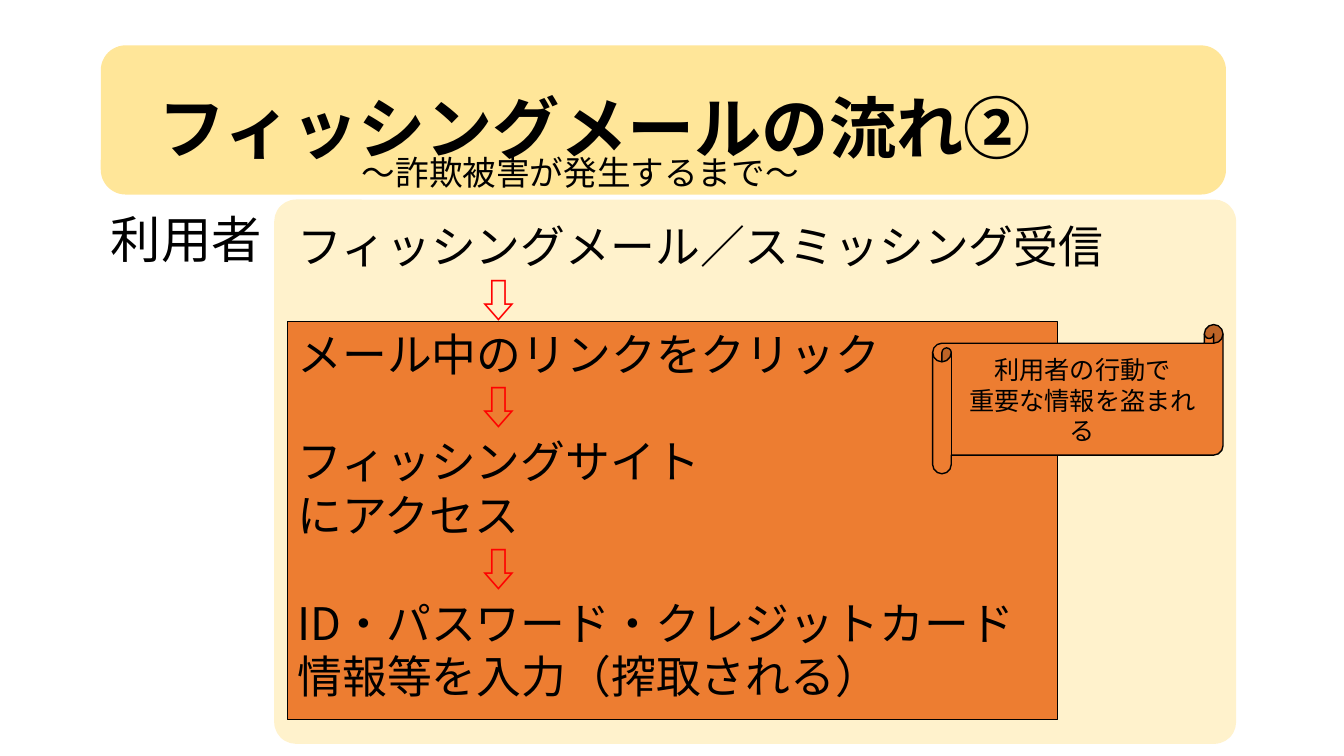
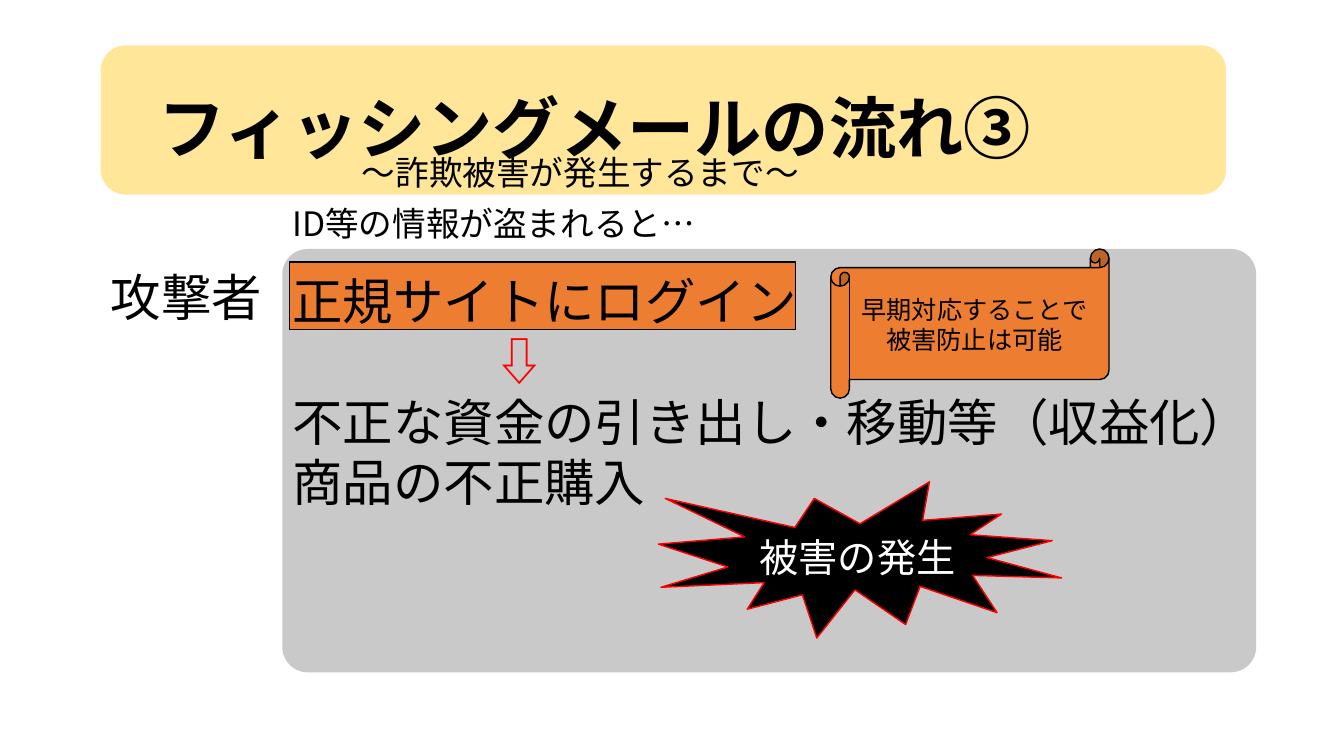
import dataclasses

import lxml.etree
import pptx
import pptx.dml.color
import pptx.enum.lang
import pptx.enum.shapes
import pptx.enum.text
import pptx.oxml.ns
import pptx.util

Inches = pptx.util.Inches
Pt = pptx.util.Pt
SHAPE = pptx.enum.shapes.MSO_SHAPE
ALIGN = pptx.enum.text.PP_ALIGN
ANCHOR = pptx.enum.text.MSO_ANCHOR


@dataclasses.dataclass(frozen=True)
class Theme:
    text: str = "000000"
    inverse: str = "FFFFFF"
    alert: str = "FF0000"
    band: str = "FFE699"
    user_panel: str = "FFF2CC"
    attacker_panel: str = "C9C9C9"
    highlight: str = "ED7D31"
    japanese_font: str = "Noto Sans CJK JP"
    callout_font: str = "Calibri"
    title_size: int = 48
    large_size: int = 36
    step_size: int = 32
    burst_size: int = 28
    small_size: int = 24
    callout_size: int = 18
    line_pitch: float = 1.2
    top_shift: float = 0.07


THEME = Theme()
ARROW = "⇩"
ARROW_INDENT = 4  # in characters
SUBTITLE = "～詐欺被害が発生するまで～"


def rgb(value):
    return pptx.dml.color.RGBColor.from_string(value)


def set_attributes(target, values):
    for name, value in values.items():
        setattr(target, name, value)


def place(shape, box):
    names = ("left", "top", "width", "height")
    set_attributes(shape, dict(zip(names, map(Inches, box))))


def add_element(parent, tag, **attributes):
    return lxml.etree.SubElement(parent, pptx.oxml.ns.qn(tag), attributes)


def add_run(paragraph, text, size, color, font_name, bold):
    run = paragraph.add_run()
    run.text = text
    run.font.color.rgb = rgb(color)
    set_attributes(run.font, {
        "name": font_name,
        "size": Pt(size),
        "bold": bold,
        "language_id": pptx.enum.lang.MSO_LANGUAGE_ID.JAPANESE,
    })
    add_element(run.font._element, "a:ea", typeface=font_name)


def write(shape, lines, size, color=THEME.text, font_name=THEME.japanese_font,
          bold=False, align=ALIGN.LEFT, anchor=ANCHOR.TOP, spacing=1):
    """Fill a shape with one paragraph a line; arrow lines are indented and red."""
    frame = shape.text_frame
    set_attributes(frame, {
        "word_wrap": True,
        "auto_size": pptx.enum.text.MSO_AUTO_SIZE.NONE,
        "vertical_anchor": anchor,
        "margin_left": Inches(0.1),
        "margin_right": Inches(0.1),
        "margin_top": Inches(0.05) + Pt(THEME.top_shift * size),
        "margin_bottom": Inches(0.05),
    })
    for index, line in enumerate(lines):
        paragraph = frame.add_paragraph() if index else frame.paragraphs[0]
        is_arrow = line == ARROW
        set_attributes(paragraph, {
            "alignment": align,
            "line_spacing": Pt(size * THEME.line_pitch * spacing),
            "space_before": Pt(0),
            "space_after": Pt(0),
        })
        properties = paragraph._p.get_or_add_pPr()
        indent = Pt(ARROW_INDENT * size) if is_arrow else 0
        properties.set("marL", str(indent))
        properties.set("indent", "0")
        add_element(properties, "a:buNone")
        add_run(paragraph, line, size, THEME.alert if is_arrow else color,
                font_name, bold)


def add_block(slide, kind, box, fill, line=None, corner=None):
    shape = slide.shapes.add_shape(kind, *map(Inches, box))
    shape.shadow.inherit = False
    shape.fill.solid()
    shape.fill.fore_color.rgb = rgb(fill)
    if line:
        shape.line.color.rgb = rgb(line)
        shape.line.width = Pt(1)
    else:
        shape.line.fill.background()
    if corner is not None:
        shape.adjustments[0] = corner
    return shape


def add_label(slide, box, text, size):
    write(slide.shapes.add_textbox(*map(Inches, box)), [text], size)


def fill_placeholder(slide, placeholder, box, lines, size, **style):
    """Place a placeholder above the shapes drawn so far and write in it."""
    slide.shapes._spTree.append(placeholder._element)
    place(placeholder, box)
    write(placeholder, lines, size, **style)


def add_callout(slide, box, lines):
    scroll = add_block(slide, SHAPE.HORIZONTAL_SCROLL, box, THEME.highlight, THEME.text)
    write(scroll, lines, THEME.callout_size, font_name=THEME.callout_font,
          align=ALIGN.CENTER, anchor=ANCHOR.MIDDLE)


def add_burst(slide, box, text):
    burst = add_block(slide, SHAPE.EXPLOSION1, box, THEME.text, THEME.alert)
    write(burst, [text], THEME.burst_size, color=THEME.inverse,
          font_name=THEME.callout_font, align=ALIGN.CENTER, anchor=ANCHOR.MIDDLE)


def add_header(slide, title):
    add_block(slide, SHAPE.ROUNDED_RECTANGLE, (1, 0.45, 11.16, 1.48), THEME.band)
    fill_placeholder(slide, slide.shapes.title, (1.47, 0.36, 11.72, 1.12), [title],
                     THEME.title_size, bold=True, spacing=1.5)
    add_label(slide, (3.49, 1.43, 5.15, 0.5), SUBTITLE, THEME.small_size)


def add_steps(slide, panel, panel_fill, corner, highlight, box, lines, size):
    """Draw the panel, its highlighted area and the list of steps."""
    add_block(slide, SHAPE.ROUNDED_RECTANGLE, panel, panel_fill, corner=corner)
    add_block(slide, SHAPE.RECTANGLE, highlight, THEME.highlight, THEME.text)
    fill_placeholder(slide, slide.placeholders[1], box, lines, size)


def add_flow_slide(presentation, title):
    slide = presentation.slides.add_slide(presentation.slide_layouts[1])
    add_header(slide, title)
    return slide


def build_user_slide(presentation):
    slide = add_flow_slide(presentation, "フィッシングメールの流れ②")
    add_steps(
        slide, (2.72, 1.98, 9.54, 5.4), THEME.user_panel, 0.04,
        (2.85, 3.19, 7.64, 3.95), (2.85, 2.09, 9.47, 4.95),
        ["フィッシングメール／スミッシング受信", ARROW,
         "メール中のリンクをクリック", ARROW,
         "フィッシングサイト", "にアクセス", ARROW,
         "ID・パスワード・クレジットカード", "情報等を入力（搾取される）"],
        THEME.step_size)
    add_label(slide, (1, 1.98, 1.94, 0.71), "利用者", THEME.large_size)
    add_callout(slide, (9.25, 3.22, 2.88, 1.48),
                ["利用者の行動で", "重要な情報を盗まれる"])


def build_attacker_slide(presentation):
    slide = add_flow_slide(presentation, "フィッシングメールの流れ③")
    add_steps(
        slide, (2.8, 2.47, 9.66, 4.2), THEME.attacker_panel, 0.06,
        (2.87, 2.6, 5.02, 0.67), (2.8, 2.59, 10.04, 2.52),
        ["正規サイトにログイン", ARROW,
         "不正な資金の引き出し・移動等（収益化）", "商品の不正購入"],
        THEME.large_size)
    add_label(slide, (1, 2.55, 1.87, 0.71), "攻撃者", THEME.large_size)
    add_label(slide, (2.8, 1.94, 4.55, 0.5), "ID等の情報が盗まれると…", THEME.small_size)
    add_burst(slide, (6.53, 4.78, 4, 1.55), "被害の発生")
    add_callout(slide, (8.24, 2.47, 2.76, 1.48),
                ["早期対応することで", "被害防止は可能"])


def main():
    presentation = pptx.Presentation()
    set_attributes(presentation, {"slide_width": Inches(13.33),
                                  "slide_height": Inches(7.5)})
    build_user_slide(presentation)
    build_attacker_slide(presentation)
    presentation.save("out.pptx")


if __name__ == "__main__":
    main()
